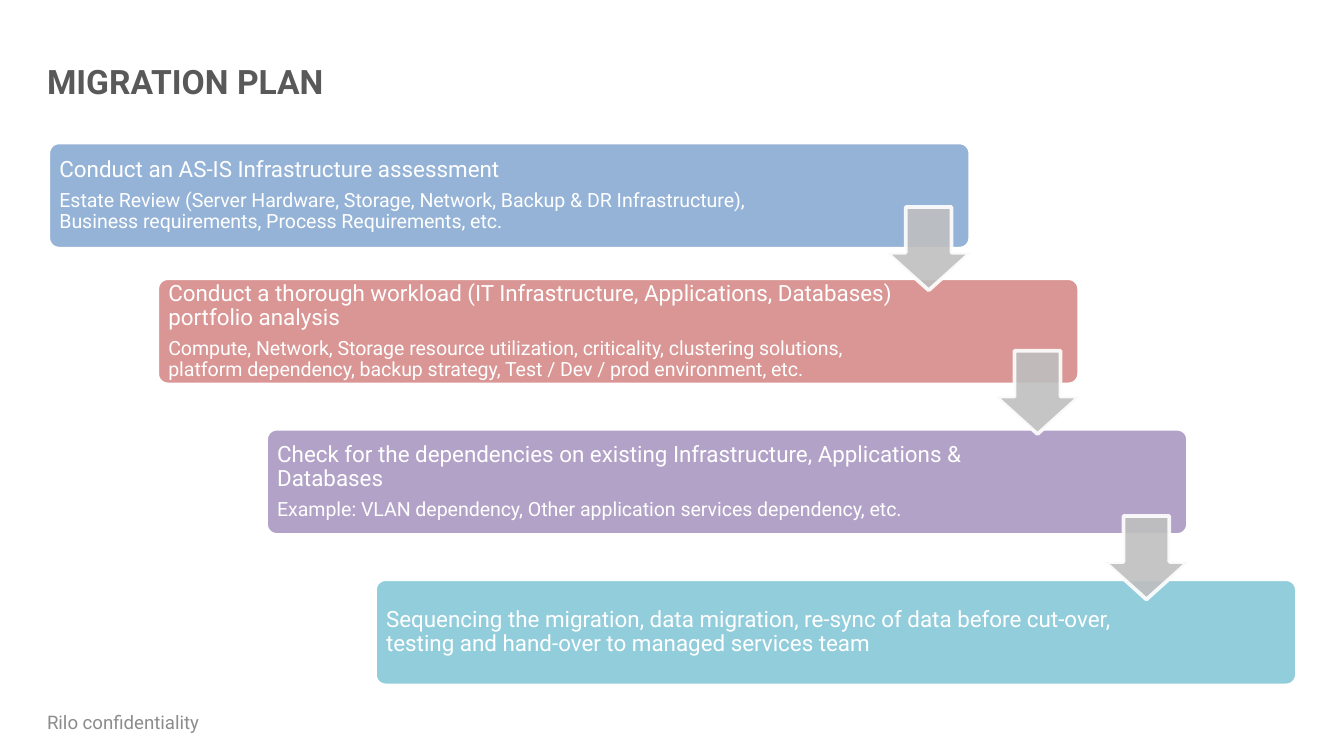
from lxml.etree import SubElement
from pptx import Presentation
from pptx.dml.color import RGBColor
from pptx.enum.shapes import MSO_SHAPE as Preset
from pptx.enum.text import MSO_ANCHOR as Anchor, MSO_AUTO_SIZE as AutoSize, PP_ALIGN as Align
from pptx.oxml.ns import qn
from pptx.util import Inches, Pt

FONT = "Roboto"
WHITE = "FFFFFF"
STEP_WIDTH, STEP_HEIGHT = 6.86, 0.79
FIRST_LEFT, STEP_INDENT = 0.36, 0.81
STEP_INSET = 0.06
ARROW_SIZE = 0.62

# top, fill, right inset, heading, detail
STEPS = [
    (1.06, "95B3D7", 1.11,
     "Conduct an AS-IS Infrastructure assessment",
     "Estate Review (Server Hardware, Storage, Network, Backup & DR Infrastructure), "
     "Business requirements, Process Requirements, etc."),
    (2.07, "D99694", 1.31,
     "Conduct a thorough workload (IT Infrastructure, Applications, Databases) "
     "portfolio analysis",
     "Compute, Network, Storage resource utilization, criticality, clustering solutions, "
     "platform dependency, backup strategy, Test / Dev / prod environment, etc."),
    (3.19, "B2A2C7", 1.3,
     "Check for the dependencies on existing Infrastructure, Applications & Databases",
     "Example: VLAN dependency, Other application services dependency, etc."),
    (4.31, "92CDDC", 1.3,
     "Sequencing the migration, data migration, re-sync of data before cut-over, "
     "testing and hand-over to managed services team", None),
]
ARROW_TOPS = [1.54, 2.61, 3.84]


def color(value):
    return RGBColor.from_string(value)


def add_run(paragraph, text, size, text_color, bold=False):
    run = paragraph.add_run()
    run.text = text
    run.font.name = FONT
    run.font.size = Pt(size)
    run.font.bold = bold
    run.font.color.rgb = color(text_color)


def set_frame(frame, left, top, right, bottom):
    frame.word_wrap = True
    frame.vertical_anchor = Anchor.MIDDLE
    frame.margin_left, frame.margin_top = Inches(left), Inches(top)
    frame.margin_right, frame.margin_bottom = Inches(right), Inches(bottom)


def add_outlined_shape(slide, preset, left, top, width, height, fill):
    shape = slide.shapes.add_shape(
        preset, Inches(left), Inches(top), Inches(width), Inches(height))
    shape.shadow.inherit = False
    shape.fill.solid()
    shape.fill.fore_color.rgb = color(fill)
    shape.line.color.rgb = color(WHITE)
    shape.line.width = Pt(2)
    return shape


def add_step(slide, left, top, fill, right_inset, heading, detail):
    shape = add_outlined_shape(
        slide, Preset.ROUNDED_RECTANGLE, left, top, STEP_WIDTH, STEP_HEIGHT, fill)
    shape.adjustments[0] = 0.1
    frame = shape.text_frame
    set_frame(frame, STEP_INSET, STEP_INSET, right_inset, STEP_INSET)
    lines = [(heading, 12)] + ([(detail, 10.5)] if detail else [])
    for index, (text, size) in enumerate(lines):
        paragraph = frame.add_paragraph() if index else frame.paragraphs[0]
        paragraph.alignment = Align.LEFT
        paragraph.line_spacing = 0.9
        paragraph.space_after = Pt(0.35 * size)
        add_run(paragraph, text, size, WHITE)


def add_arrow(slide, left, top):
    shape = add_outlined_shape(
        slide, Preset.DOWN_ARROW, left, top, ARROW_SIZE, ARROW_SIZE, "BFBFBF")
    shape.adjustments[0] = 0.55
    shape.adjustments[1] = 0.45
    for rgb in shape.element.spPr.iter(qn("a:srgbClr")):
        SubElement(rgb, qn("a:alpha"), val="90000")


def set_title(slide, text):
    title = slide.shapes.title
    title.left, title.top = Inches(0.35), Inches(0.4)
    title.width, title.height = Inches(8.24), Inches(0.4)
    frame = title.text_frame
    set_frame(frame, 0, 0.05, 0.1, 0.05)
    frame.auto_size = AutoSize.SHAPE_TO_FIT_TEXT
    paragraph = frame.paragraphs[0]
    paragraph.alignment = Align.LEFT
    add_run(paragraph, text, 18, "595959", bold=True)


def add_footer(slide, text):
    box = slide.shapes.add_textbox(Inches(0.35), Inches(5.22), Inches(1.58), Inches(0.3))
    set_frame(box.text_frame, 0, 0.05, 0, 0.05)
    add_run(box.text_frame.paragraphs[0], text, 10, "8C8C8C")


def main():
    presentation = Presentation()
    presentation.slide_width = Inches(10)
    presentation.slide_height = Inches(10) * 9 // 16
    slide = presentation.slides.add_slide(presentation.slide_layouts[5])

    set_title(slide, "MIGRATION PLAN")
    add_footer(slide, "Rilo confidentiality")
    for index, step in enumerate(STEPS):
        add_step(slide, FIRST_LEFT + index * STEP_INDENT, *step)
    for index, top in enumerate(ARROW_TOPS):
        step_right = FIRST_LEFT + index * STEP_INDENT + STEP_WIDTH
        add_arrow(slide, step_right - ARROW_SIZE, top)

    presentation.save("out.pptx")


if __name__ == "__main__":
    main()
